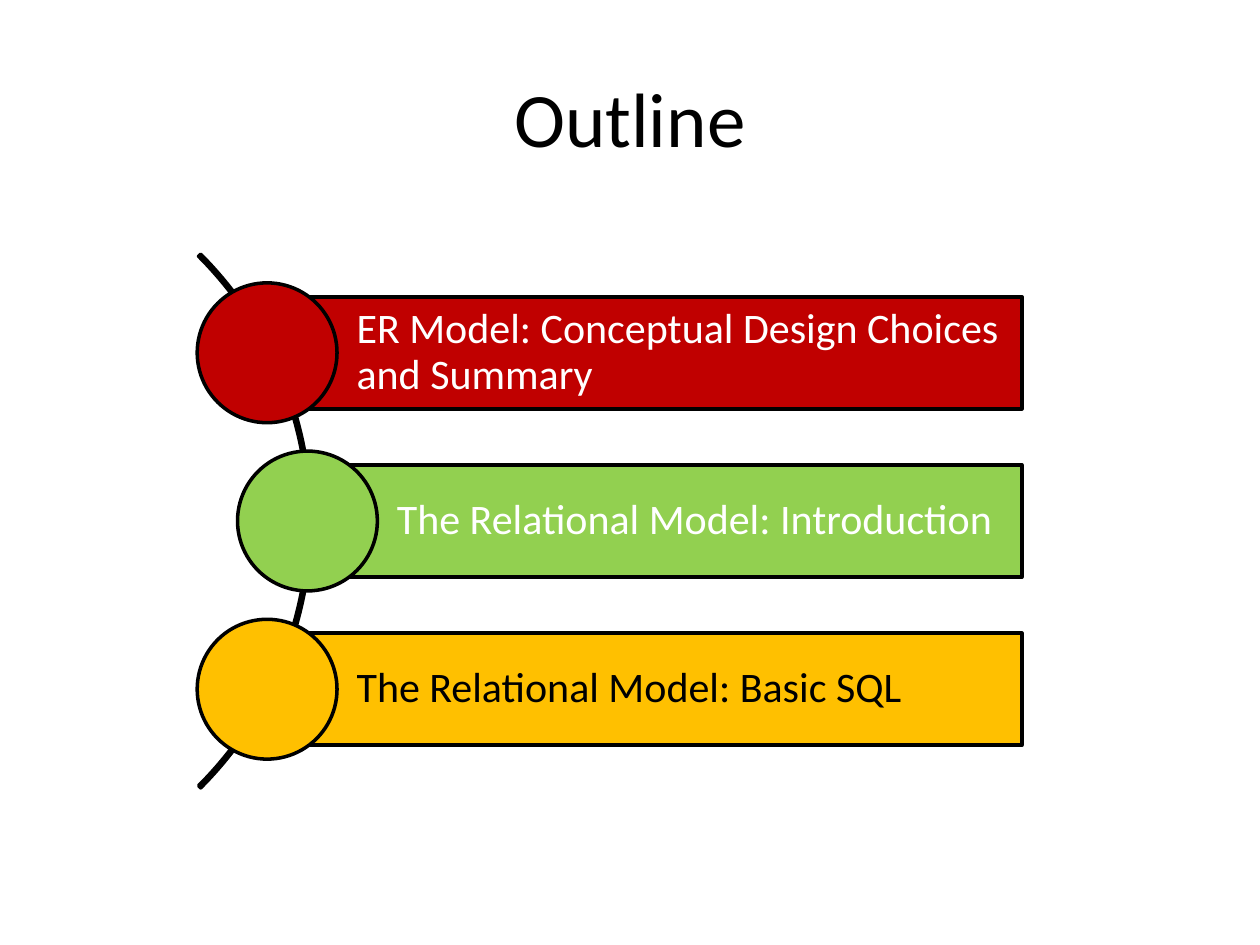
from pptx import Presentation
from pptx.dml.color import RGBColor
from pptx.enum.shapes import MSO_SHAPE as Shape
from pptx.enum.text import MSO_ANCHOR as Anchor, PP_ALIGN as Align
from pptx.util import Inches, Pt

BLACK = RGBColor(0x00, 0x00, 0x00)
WHITE = RGBColor(0xFF, 0xFF, 0xFF)
RED = RGBColor(0xC0, 0x00, 0x00)
GREEN = RGBColor(0x92, 0xD0, 0x50)
AMBER = RGBColor(0xFF, 0xC0, 0x00)

TITLE = "Outline"
TOPICS = [
    ("ER Model: Conceptual Design Choices and Summary", 2.12, RED, WHITE),
    ("The Relational Model: Introduction", 2.44, GREEN, WHITE),
    ("The Relational Model: Basic SQL", 2.12, AMBER, BLACK),
]

FONT = "Calibri"
BAR_RIGHT = 8.11
BAR_HEIGHT = 0.89
CIRCLE = 1.11
FIRST_CENTER = 2.8
PITCH = 1.335
ARC_LEFT = -3.52
ARC_SIZE = 5.99


def add_outlined(page, kind, left, top, width, height, fill=None):
    shape = page.shapes.add_shape(
        kind, Inches(left), Inches(top), Inches(width), Inches(height))
    shape.shadow.inherit = False
    if fill is None:
        shape.fill.background()
    else:
        shape.fill.solid()
        shape.fill.fore_color.rgb = fill
    shape.line.color.rgb = BLACK
    shape.line.width = Pt(2)
    return shape


def write(shape, text, size, color, align):
    frame = shape.text_frame
    frame.word_wrap = True
    frame.vertical_anchor = Anchor.MIDDLE
    para = frame.paragraphs[0]
    para.alignment = align
    span = para.add_run()
    span.text = text
    span.font.name = FONT
    span.font.size = Pt(size)
    span.font.color.rgb = color
    return frame


def add_topic(page, center, text, left, fill, color):
    bar = add_outlined(page, Shape.RECTANGLE, left, center - BAR_HEIGHT / 2,
                       BAR_RIGHT - left, BAR_HEIGHT, fill)
    frame = write(bar, text, 24, color, Align.LEFT)
    frame.margin_left = Inches(0.71)
    frame.margin_top = frame.margin_right = frame.margin_bottom = Inches(0.07)
    frame.paragraphs[0].line_spacing = 0.9
    add_outlined(page, Shape.OVAL, left - CIRCLE / 2, center - CIRCLE / 2,
                 CIRCLE, CIRCLE, fill)


def main():
    deck = Presentation()
    deck.slide_width, deck.slide_height = Inches(10), Inches(7.5)
    page = deck.slides.add_slide(deck.slide_layouts[6])

    title = page.shapes.add_textbox(
        Inches(0.5), Inches(0.3), Inches(9), Inches(1.25))
    write(title, TITLE, 44, BLACK, Align.CENTER)

    middle = FIRST_CENTER + PITCH
    arc = add_outlined(page, Shape.BLOCK_ARC, ARC_LEFT, middle - ARC_SIZE / 2,
                       ARC_SIZE, ARC_SIZE)
    for index, value in enumerate((189, 27, 0.004)):
        arc.adjustments[index] = value

    for index, topic in enumerate(TOPICS):
        add_topic(page, FIRST_CENTER + index * PITCH, *topic)

    deck.save("out.pptx")


if __name__ == "__main__":
    main()
